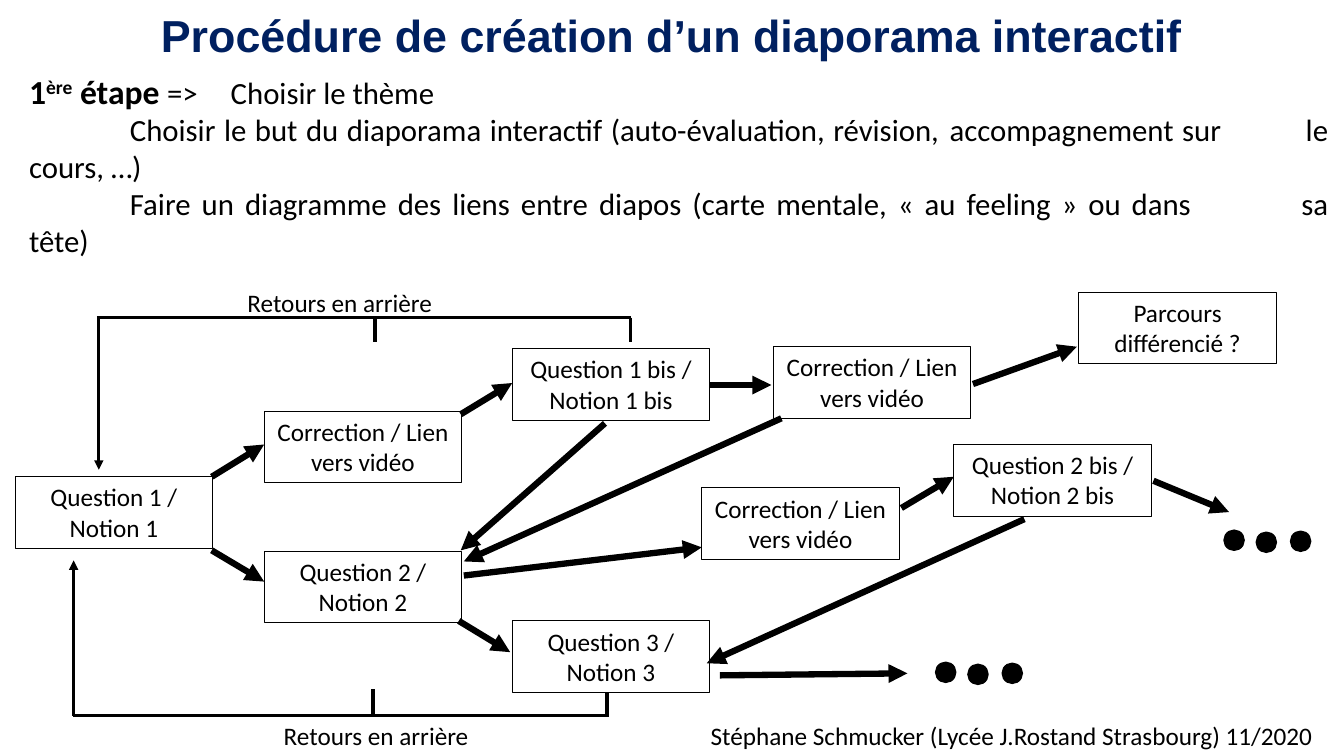
from typing import NamedTuple

from lxml import etree
from pptx import Presentation
from pptx.dml.color import RGBColor
from pptx.enum.shapes import MSO_CONNECTOR as Connector, MSO_SHAPE as Shape
from pptx.enum.text import MSO_ANCHOR as Anchor, PP_ALIGN as Align
from pptx.oxml.ns import qn
from pptx.util import Inches, Pt

BLACK = RGBColor(0x00, 0x00, 0x00)
NAVY = RGBColor(0x00, 0x20, 0x60)
BOX_WIDTH, BOX_HEIGHT = 1.96, 0.71
DOT_SIZE = 0.2
DOT_OFFSETS = [(0, 0), (0.32, 0.02), (0.66, 0.01)]
THICK, THIN = 4.5, 2.25


class Step(NamedTuple):
    left: float
    top: float
    text: str


class Link(NamedTuple):
    x1: float
    y1: float
    x2: float
    y2: float
    width: float = THICK
    arrow: bool = True


class Label(NamedTuple):
    left: float
    top: float
    width: float
    height: float
    text: str
    align: Align = Align.CENTER
    size: int = 18
    font: str = "Calibri"
    color: RGBColor = BLACK
    bold: bool = False


CORRECTION = "Correction / Lien vers vidéo"
STEPS = [
    Step(0.15, 4.73, "Question 1 / Notion 1"),
    Step(2.62, 4.08, CORRECTION),
    Step(5.08, 3.46, "Question 1 bis / Notion 1 bis"),
    Step(2.62, 5.47, "Question 2 / Notion 2"),
    Step(7.67, 3.44, CORRECTION),
    Step(6.96, 4.84, CORRECTION),
    Step(5.08, 6.16, "Question 3 / Notion 3"),
    Step(10.7, 2.9, "Parcours différencié ?"),
    Step(9.46, 4.41, "Question 2 bis / Notion 2 bis"),
]

LINKS = [
    # Progress from step to step
    Link(2.1, 4.73, 2.62, 4.41),
    Link(4.57, 4.11, 5.08, 3.8),
    Link(7.04, 3.82, 7.65, 3.82),
    Link(9.65, 3.81, 10.68, 3.44),
    Link(2.1, 5.46, 2.62, 5.77),
    Link(4.6, 5.71, 6.96, 5.43),
    Link(8.94, 5.04, 9.46, 4.73),
    Link(11.44, 4.77, 12.19, 5.08),
    Link(4.55, 6.16, 5.06, 6.47),
    Link(7.14, 6.7, 9, 6.68),
    # Jumps to the next question
    Link(6, 4.2, 4.57, 5.46),
    Link(7.75, 4.15, 4.6, 5.57),
    Link(10.16, 5.15, 7.01, 6.58),
    # Lower way back
    Link(0.73, 7.1, 0.73, 5.56, THIN),
    Link(0.72, 7.1, 6.02, 7.1, THIN, False),
    Link(3.7, 6.84, 3.7, 7.08, THIN, False),
    Link(6.02, 6.87, 6.02, 7.11, THIN, False),
    # Upper way back
    Link(0.98, 3.15, 0.98, 4.66, THIN),
    Link(0.96, 3.15, 6.26, 3.15, THIN, False),
    Link(3.72, 3.15, 3.72, 3.39, THIN, False),
    Link(6.25, 3.15, 6.25, 3.39, THIN, False),
]

DOT_GROUPS = [(12.14, 5.26), (9.28, 6.57)]

LABELS = [
    Label(0, 0.03, 13.33, 0.64, "Procédure de création d’un diaporama interactif",
          size=32, font="Arial", color=NAVY, bold=True),
    Label(2.11, 2.8, 2.52, 0.4, "Retours en arrière"),
    Label(2.47, 7.1, 2.52, 0.4, "Retours en arrière"),
    Label(6.95, 7.1, 6.42, 0.4,
          "Stéphane Schmucker (Lycée J.Rostand Strasbourg) 11/2020", Align.LEFT),
]

INSTRUCTIONS = [
    "=>  \tChoisir le thème ",
    "\t\tChoisir le but du diaporama interactif (auto-évaluation, révision, "
    "\taccompagnement sur \t\tle cours, …)",
    "\t\tFaire un diagramme des liens entre diapos (carte mentale, "
    "« au feeling » ou dans \t\tsa tête)",
]


def set_font(font, size: float, name: str = "Calibri",
             color: RGBColor = BLACK, bold: bool = False) -> None:
    font.size, font.name, font.bold = Pt(size), name, bold
    font.color.rgb = color


def add_text_box(slide, left: float, top: float, width: float, height: float):
    box = slide.shapes.add_textbox(Inches(left), Inches(top), Inches(width), Inches(height))
    box.text_frame.word_wrap = True
    return box.text_frame


def add_label(slide, label: Label) -> None:
    frame = add_text_box(slide, label.left, label.top, label.width, label.height)
    paragraph = frame.paragraphs[0]
    paragraph.text, paragraph.alignment = label.text, label.align
    set_font(paragraph.font, label.size, label.font, label.color, label.bold)


def add_instructions(slide) -> None:
    frame = add_text_box(slide, 0.19, 0.65, 13.08, 1.99)
    for index, text in enumerate(INSTRUCTIONS):
        paragraph = frame.paragraphs[0] if index == 0 else frame.add_paragraph()
        paragraph.alignment = Align.JUSTIFY
        if index == 0:
            for heading, baseline in [("1", 0), ("ère", 30000), (" étape ", 0)]:
                run = paragraph.add_run()
                run.text = heading
                set_font(run.font, 24, bold=True)
                if baseline:
                    run._r.get_or_add_rPr().set("baseline", str(baseline))
        run = paragraph.add_run()
        run.text = text
        set_font(run.font, 22)


def add_step(slide, step: Step) -> None:
    shape = slide.shapes.add_shape(Shape.RECTANGLE, Inches(step.left), Inches(step.top),
                                   Inches(BOX_WIDTH), Inches(BOX_HEIGHT))
    shape.shadow.inherit = False
    shape.fill.background()
    shape.line.color.rgb, shape.line.width = BLACK, Pt(0.75)
    frame = shape.text_frame
    frame.word_wrap, frame.vertical_anchor = True, Anchor.TOP
    paragraph = frame.paragraphs[0]
    paragraph.text, paragraph.alignment = step.text, Align.CENTER
    set_font(paragraph.font, 18)


def add_link(slide, link: Link) -> None:
    connector = slide.shapes.add_connector(Connector.STRAIGHT, Inches(link.x1), Inches(link.y1),
                                           Inches(link.x2), Inches(link.y2))
    connector.line.color.rgb, connector.line.width = BLACK, Pt(link.width)
    if link.arrow:
        etree.SubElement(connector.line._get_or_add_ln(), qn("a:tailEnd"), type="triangle")
    etree.SubElement(connector._element.spPr, qn("a:effectLst"))


def add_dots(slide, left: float, top: float) -> None:
    for dx, dy in DOT_OFFSETS:
        dot = slide.shapes.add_shape(Shape.OVAL, Inches(left + dx), Inches(top + dy),
                                     Inches(DOT_SIZE), Inches(DOT_SIZE))
        dot.shadow.inherit = False
        dot.fill.solid()
        dot.fill.fore_color.rgb = BLACK
        dot.line.color.rgb, dot.line.width = BLACK, Pt(1)


def main() -> None:
    presentation = Presentation()
    presentation.slide_width, presentation.slide_height = Inches(13.33), Inches(7.5)
    slide = presentation.slides.add_slide(presentation.slide_layouts[6])

    # Title, captions and instructions
    for label in LABELS:
        add_label(slide, label)
    add_instructions(slide)

    # Diagram
    for step in STEPS:
        add_step(slide, step)
    for link in LINKS:
        add_link(slide, link)
    for left, top in DOT_GROUPS:
        add_dots(slide, left, top)

    presentation.save("out.pptx")


if __name__ == "__main__":
    main()
